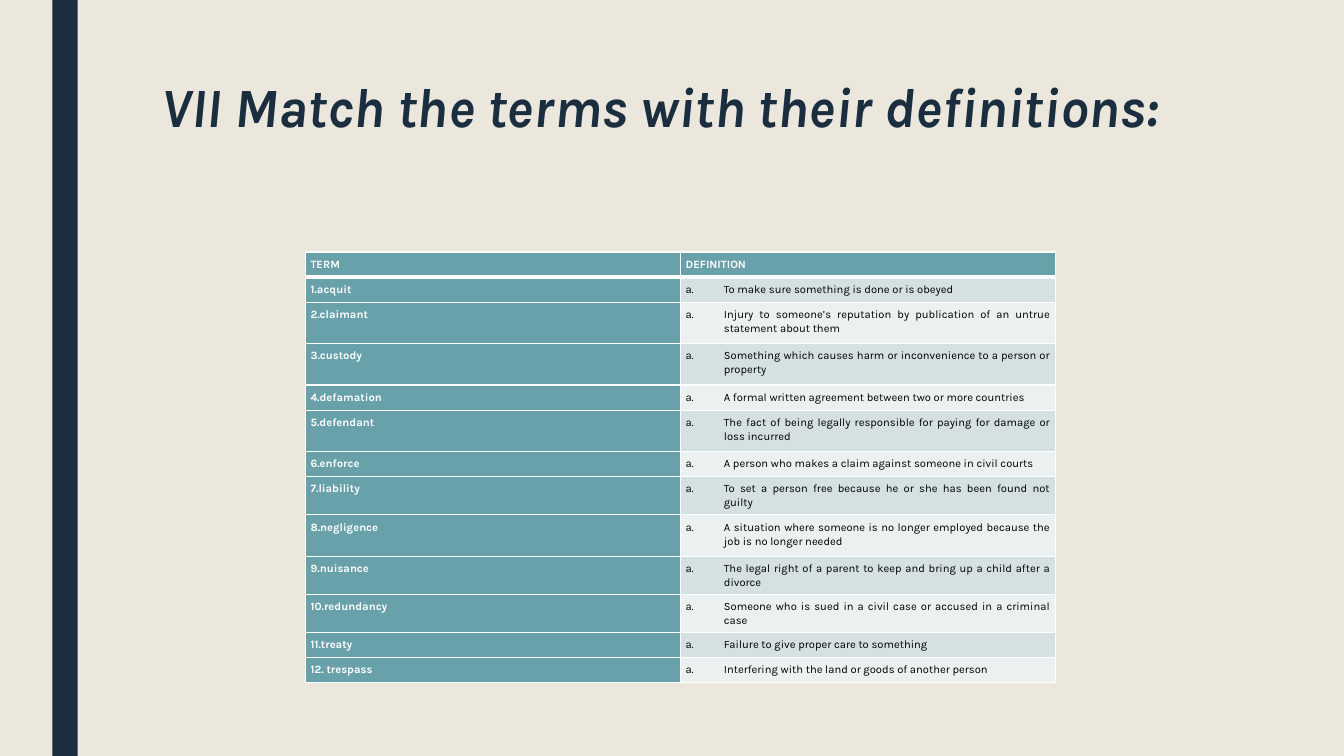
"""Build a slide with a table of legal terms to match with definitions."""
from lxml import etree
from pptx import Presentation, util as u
from pptx.dml.color import RGBColor
from pptx.enum import shapes, text
from pptx.oxml import ns

TITLE = "VII Match the terms with their definitions:"
HEADER = ("TERM", "DEFINITION")
ENTRIES = [
    ("1.acquit", "To make sure something is done or is obeyed"),
    ("2.claimant", "Injury to someone’s reputation by publication of an untrue statement about them"),
    ("3.custody", "Something which causes harm or inconvenience to a person or property"),
    ("4.defamation", "A formal written agreement between two or more countries"),
    ("5.defendant", "The fact of being legally responsible for paying for damage or loss incurred"),
    ("6.enforce", "A person who makes a claim against someone in civil courts"),
    ("7.liability", "To set a person free because he or she has been found not guilty"),
    ("8.negligence", "A situation where someone is no longer employed because the job is no longer needed"),
    ("9.nuisance", "The legal right of a parent to keep and bring up a child after a divorce"),
    ("10.redundancy", "Someone who is sued in a civil case or accused in a criminal case"),
    ("11.treaty", "Failure to give proper care to something"),
    ("12. trespass", "Interfering with the land or goods of another person"),
]
TALL_ROWS = {2, 3, 5, 8}
ROW_HEIGHT, TALL_HEIGHT = 0.25, 0.41
COLUMN_WIDTH = 3.72

FONT = "Karla"
CREAM = RGBColor(0xEB, 0xE7, 0xDD)
NAVY = RGBColor(0x1A, 0x2E, 0x40)
TEAL = RGBColor(0x69, 0xA1, 0xAB)
BANDS = (RGBColor(0xEB, 0xF0, 0xF1), RGBColor(0xD4, 0xE0, 0xE2))
WHITE = RGBColor(0xFF, 0xFF, 0xFF)
BLACK = RGBColor(0, 0, 0)


def add_run(paragraph, words, size, color, bold, italic=False):
    run = paragraph.add_run()
    run.text = words
    font = run.font
    font.name, font.size, font.bold, font.italic = FONT, u.Pt(size), bold, italic
    font.color.rgb = color


def set_borders(cell, row):
    properties = cell._tc.get_or_add_tcPr()
    widths = {"lnL": 1, "lnR": 1, "lnT": 3 if row == 1 else 1, "lnB": 3 if row == 0 else 1}
    for position, (side, width) in enumerate(widths.items()):
        line = etree.Element(ns.qn("a:" + side), w=str(u.Pt(width)))
        fill = etree.SubElement(line, ns.qn("a:solidFill"))
        etree.SubElement(fill, ns.qn("a:srgbClr"), val=str(WHITE))
        properties.insert(position, line)


def fill_cell(cell, row, column, words):
    is_definition = row > 0 and column == 1
    cell.fill.solid()
    cell.fill.fore_color.rgb = BANDS[row % 2] if is_definition else TEAL
    cell.margin_left = cell.margin_right = u.Inches(0.05)
    cell.margin_top = cell.margin_bottom = u.Inches(0.05)
    paragraph = cell.text_frame.paragraphs[0]
    paragraph.alignment = text.PP_ALIGN.JUSTIFY
    paragraph.line_spacing = 1.07
    if is_definition:
        properties = paragraph._p.get_or_add_pPr()
        properties.set("marL", str(u.Inches(0.38)))
        properties.set("indent", str(u.Inches(-0.38)))
        etree.SubElement(properties, ns.qn("a:buAutoNum"), type="alphaLcPeriod")
    add_run(paragraph, words, 8, BLACK if is_definition else WHITE, not is_definition)
    set_borders(cell, row)


def add_title(slide):
    title = slide.shapes.title
    title.left, title.top = u.Inches(1.5), u.Inches(0.75)
    title.width, title.height = u.Inches(10.5), u.Inches(1.62)
    frame = title.text_frame
    frame.word_wrap = True
    frame.auto_size = text.MSO_AUTO_SIZE.NONE
    frame.vertical_anchor = text.MSO_ANCHOR.TOP
    paragraph = frame.paragraphs[0]
    paragraph.alignment = text.PP_ALIGN.LEFT
    paragraph.line_spacing = 0.89
    add_run(paragraph, TITLE, 39.6, NAVY, True, True)


def add_terms_table(slide):
    rows = [HEADER, *ENTRIES]
    heights = [TALL_HEIGHT if row in TALL_ROWS else ROW_HEIGHT for row in range(len(rows))]
    table = slide.shapes.add_table(
        len(rows), len(HEADER), u.Inches(3.03), u.Inches(2.5),
        u.Inches(COLUMN_WIDTH * len(HEADER)), u.Inches(sum(heights))).table
    for column in table.columns:
        column.width = u.Inches(COLUMN_WIDTH)
    for row, entry in enumerate(rows):
        table.rows[row].height = u.Inches(heights[row])
        for column, words in enumerate(entry):
            fill_cell(table.cell(row, column), row, column, words)


def main():
    presentation = Presentation()
    presentation.slide_width, presentation.slide_height = u.Inches(13.33), u.Inches(7.5)
    slide = presentation.slides.add_slide(presentation.slide_layouts[5])
    slide.background.fill.solid()
    slide.background.fill.fore_color.rgb = CREAM
    stripe = slide.shapes.add_shape(
        shapes.MSO_SHAPE.RECTANGLE, u.Inches(0.52), 0, u.Inches(0.25), presentation.slide_height)
    stripe.shadow.inherit = False
    stripe.fill.solid()
    stripe.fill.fore_color.rgb = NAVY
    stripe.line.fill.background()
    add_title(slide)
    add_terms_table(slide)
    presentation.save("out.pptx")


if __name__ == "__main__":
    main()
